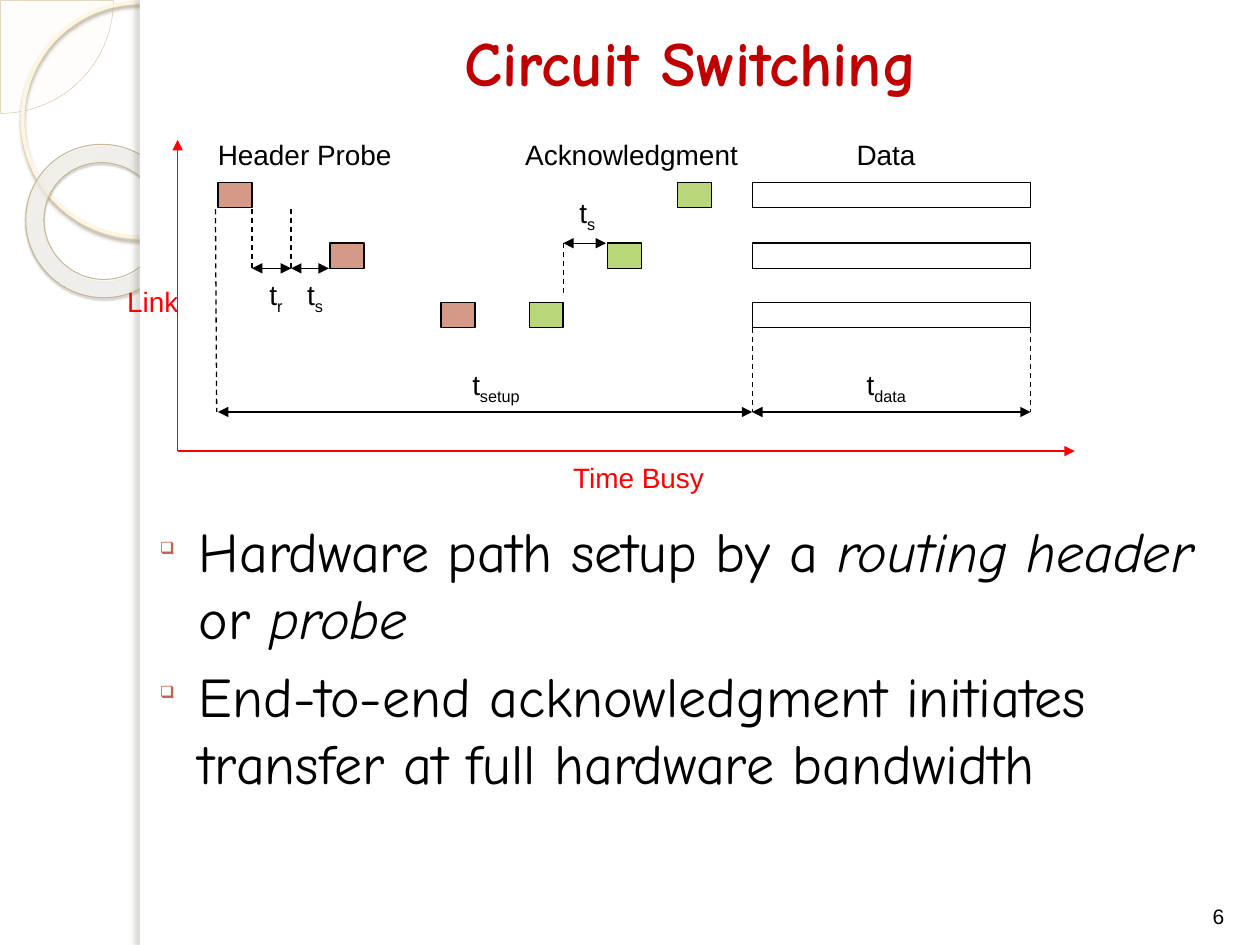
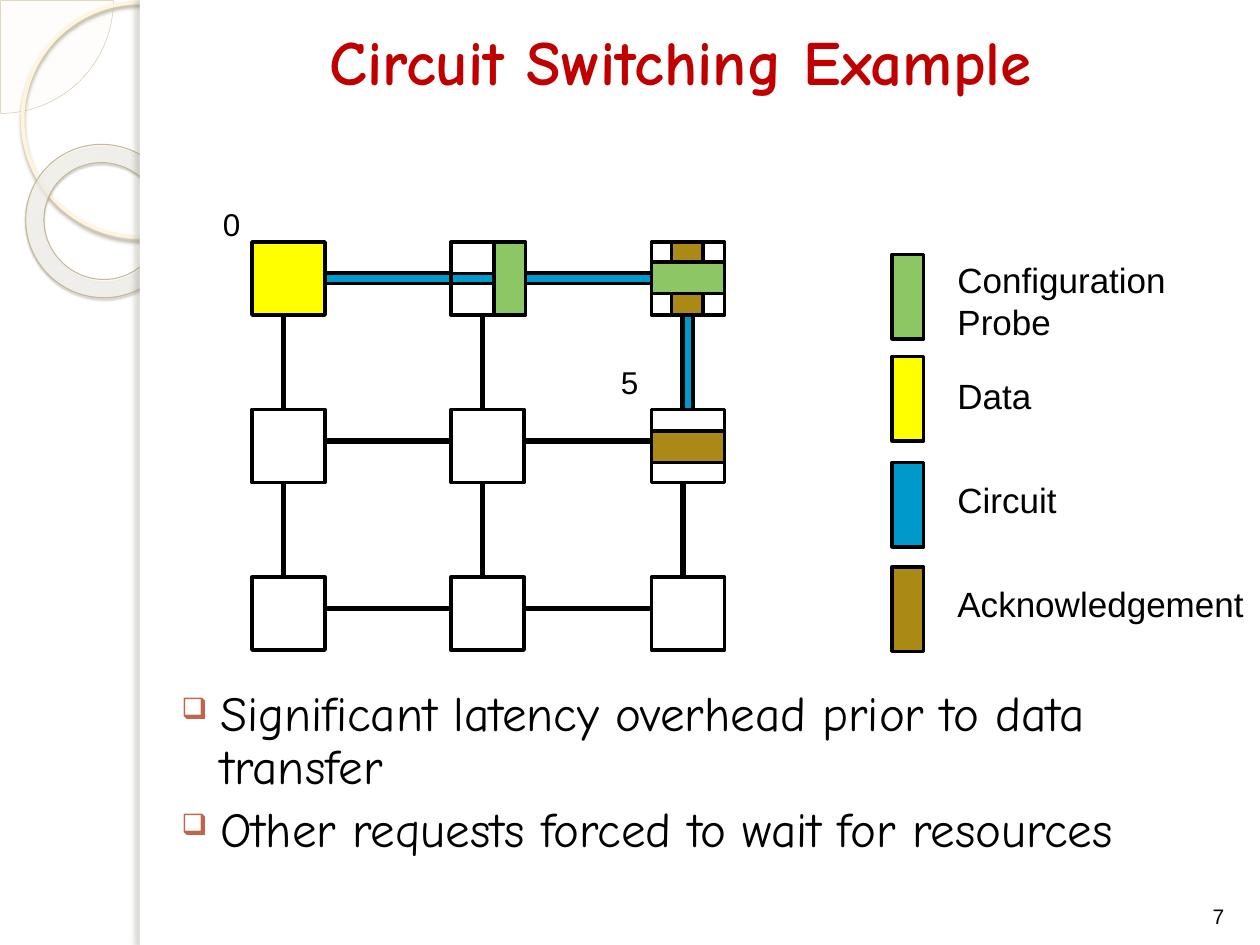
from dataclasses import dataclass
from typing import Optional

import pptx
import pptx.dml.color
import pptx.enum.dml
import pptx.enum.shapes
import pptx.enum.text
import pptx.oxml
import pptx.oxml.ns
import pptx.util

Inches = pptx.util.Inches
Pt = pptx.util.Pt
qn = pptx.oxml.ns.qn
Shape = pptx.enum.shapes.MSO_SHAPE
Align = pptx.enum.text.PP_ALIGN
Anchor = pptx.enum.text.MSO_ANCHOR


@dataclass(frozen=True)
class Theme:
    heading_font: str = "Comic Neue"
    label_font: str = "Arial"
    black: str = "000000"
    white: str = "FFFFFF"
    title: str = "C00000"
    bullet: str = "C0654C"
    axis: str = "FF0000"
    probe: str = "D59988"
    reply: str = "B9D77A"
    config: str = "8DC765"
    data: str = "FFFF00"
    circuit: str = "0099CC"
    acknowledgement: str = "AA8A14"
    title_size: int = 36
    label_size: int = 16
    node_size: int = 18
    legend_size: int = 20
    number_size: int = 12


THEME = Theme()


@dataclass(frozen=True)
class Area:
    left: float
    top: float
    width: float
    height: float

    def lengths(self) -> tuple:
        return tuple(Inches(v) for v in (self.left, self.top, self.width, self.height))


@dataclass(frozen=True)
class Shadow:
    color: str
    opacity: int
    blur: float
    distance: float
    angle: int


@dataclass(frozen=True)
class Label:
    text: str
    area: Area
    subscript: str = ""
    color: str = THEME.black


@dataclass(frozen=True)
class Line:
    start: tuple
    end: tuple
    color: str = THEME.black
    weight: float = 0.75
    dashed: bool = False
    heads: str = ""


@dataclass(frozen=True)
class LegendEntry:
    text: str
    color: str
    top: float
    text_top: float
    text_height: float = 0.43


def rgb(color: str):
    return pptx.dml.color.RGBColor.from_string(color)


def add_child(parent, tag: str, **attributes: str):
    child = parent.makeelement(qn(tag), attributes)
    parent.append(child)
    return child


def add_box(page, area: Area, fill: Optional[str] = None, line: Optional[str] = THEME.black,
            weight: float = 0.75, kind=Shape.RECTANGLE, shadow: Optional[Shadow] = None):
    box = page.shapes.add_shape(kind, *area.lengths())
    if fill:
        box.fill.solid()
        box.fill.fore_color.rgb = rgb(fill)
    else:
        box.fill.background()
    if line:
        box.line.color.rgb = rgb(line)
        box.line.width = Pt(weight)
    else:
        box.line.fill.background()
    box.shadow.inherit = False
    if shadow:
        effects = box._element.spPr.find(qn("a:effectLst"))
        outer = add_child(effects, "a:outerShdw", blurRad=str(Pt(shadow.blur)),
                          dist=str(Pt(shadow.distance)), dir=str(shadow.angle * 60000),
                          algn="tl", rotWithShape="0")
        tint = add_child(outer, "a:srgbClr", val=shadow.color)
        add_child(tint, "a:alpha", val=str(shadow.opacity * 1000))
    return box


def add_line(page, line: Line) -> None:
    ends = [Inches(v) for v in (*line.start, *line.end)]
    connector = page.shapes.add_connector(pptx.enum.shapes.MSO_CONNECTOR.STRAIGHT, *ends)
    connector.line.color.rgb = rgb(line.color)
    connector.line.width = Pt(line.weight)
    if line.dashed:
        connector.line.dash_style = pptx.enum.dml.MSO_LINE.DASH
    outline = connector.line._get_or_add_ln()
    if line.heads == "both":
        add_child(outline, "a:headEnd", type="triangle")
    if line.heads:
        add_child(outline, "a:tailEnd", type="triangle")
    add_child(connector._element.spPr, "a:effectLst")


def style_span(span, size: int, font: str = THEME.label_font, color: str = THEME.black) -> None:
    span.font.size = Pt(size)
    span.font.name = font
    span.font.color.rgb = rgb(color)


def add_text(page, area: Area, text: str, size: int, font: str = THEME.label_font,
             color: str = THEME.black, align=Align.LEFT, anchor=Anchor.TOP):
    box = page.shapes.add_textbox(*area.lengths())
    frame = box.text_frame
    frame.word_wrap = True
    frame.vertical_anchor = anchor
    frame.text = text
    for para in frame.paragraphs:
        para.alignment = align
        for span in para.runs:
            style_span(span, size, font, color)
    return box


def add_label(page, label: Label) -> None:
    box = add_text(page, label.area, label.text, THEME.label_size, color=label.color)
    box.text_frame.word_wrap = False
    box.text_frame.auto_size = pptx.enum.text.MSO_AUTO_SIZE.SHAPE_TO_FIT_TEXT
    if label.subscript:
        span = box.text_frame.paragraphs[0].add_run()
        span.text = label.subscript
        style_span(span, THEME.label_size, color=label.color)
        span._r.get_or_add_rPr().set("baseline", "-25000")


def add_bullets(page, area: Area, items: list, size: int, bullet_percent: int,
                spacing: float = 1.0) -> None:
    frame = add_text(page, area, "", size).text_frame
    for index, pieces in enumerate(items):
        para = frame.paragraphs[0] if index == 0 else frame.add_paragraph()
        para.space_before = Pt(6)
        para.line_spacing = spacing
        for position, piece in enumerate(pieces):
            span = para.add_run()
            span.text = piece
            style_span(span, size, THEME.heading_font)
            span.font.italic = position % 2 == 1
        properties = para._p.get_or_add_pPr()
        properties.set("marL", str(Inches(0.4)))
        properties.set("indent", str(Inches(-0.31)))
        add_child(add_child(properties, "a:buClr"), "a:srgbClr", val=THEME.bullet)
        add_child(properties, "a:buSzPct", val=str(bullet_percent * 1000))
        add_child(properties, "a:buChar", char="❑")


def add_side_band(page) -> None:
    pie = add_box(page, Area(-0.89, -0.89, 1.79, 1.79), "FEFAF4", "D3C39F", 0.25, Shape.PIE)
    pie.adjustments[0] = 0
    pie.adjustments[1] = 54
    tint = pie._element.spPr.find(qn("a:solidFill")).find(qn("a:srgbClr"))
    add_child(tint, "a:alpha", val="33000")

    add_box(page, Area(0.18, 0.02, 1.86, 1.86), None, "FFF5DE", 2.15, Shape.OVAL,
            Shadow("B0A68F", 85, 2, 2, 90))

    ring = add_box(page, Area(0.2, 1.15, 1.23, 1.21), None, "C7B893", 0.58, Shape.DONUT,
                   Shadow("5A5444", 35, 1, 1.2, 75))
    ring.rotation = 38.6
    ring.adjustments[0] = 0.12
    properties = ring._element.spPr
    gradient = properties.makeelement(qn("a:gradFill"), {"rotWithShape": "1"})
    stops = add_child(gradient, "a:gsLst")
    for position, color, opacity in ((0, "FFFCF6", 70), (70, "FFFEFB", 55), (100, "F0D28E", 60)):
        stop = add_child(stops, "a:gs", pos=str(position * 1000))
        add_child(add_child(stop, "a:srgbClr", val=color), "a:alpha", val=str(opacity * 1000))
    add_child(add_child(gradient, "a:path", path="circle"), "a:fillToRect",
              l="-408000", t="-50000", r="508000", b="150000")
    properties.replace(properties.find(qn("a:noFill")), gradient)

    add_box(page, Area(1.11, 0, 8.89, 7.5), THEME.white, None)
    add_box(page, Area(1.11, 0, 0.08, 7.5), THEME.white, None,
            shadow=Shadow("736F63", 25, 3, 3, 180))


def add_page(deck, title: str, title_area: Area, number: int):
    page = deck.slides.add_slide(deck.slide_layouts[6])
    add_side_band(page)
    box = add_text(page, title_area, title, THEME.title_size, THEME.heading_font,
                   THEME.title, Align.CENTER, Anchor.MIDDLE)
    box.text_frame.paragraphs[0].runs[0].font.bold = True
    add_text(page, Area(9.42, 6.9, 0.5, 0.52), str(number), THEME.number_size,
             align=Align.CENTER, anchor=Anchor.BOTTOM)
    return page


def build_timing(deck) -> None:
    page = add_page(deck, "Circuit Switching", Area(1.22, 0.14, 8.52, 0.69), 6)
    add_bullets(page, Area(1.08, 4.05, 8.65, 2.95), [
        ["Hardware path setup by a ", "routing header", " or ", "probe"],
        ["End-to-end acknowledgment initiates transfer at full hardware bandwidth"],
    ], 32, 30)

    link_tops = (1.45, 1.93, 2.4)
    probe_lefts = (1.73, 2.62, 3.5)
    reply_lefts = (5.38, 4.82, 4.2)
    data_left, data_right, time_line = 5.97, 8.18, 3.27
    for top, probe_left, reply_left in zip(link_tops, probe_lefts, reply_lefts):
        add_box(page, Area(data_left, top, data_right - data_left, 0.2))
        add_box(page, Area(reply_left, top, 0.27, 0.2), THEME.reply)
        add_box(page, Area(probe_left, top, 0.27, 0.2), THEME.probe)

    for start, end in (((1.71, 1.66), (1.72, time_line)), ((2, 1.66), (2, 2.13)),
                       ((2.31, 1.66), (2.31, 2.13)), ((4.47, 1.93), (4.47, 2.33)),
                       ((data_left, 2.6), (data_left, time_line)),
                       ((data_right, 2.6), (data_right, time_line))):
        add_line(page, Line(start, end, dashed=True))
    for left, right, height in ((2, 2.31, 2.13), (2.31, 2.61, 2.13), (4.47, 4.81, 1.93),
                                (1.73, data_left, time_line),
                                (data_left, data_right, time_line)):
        add_line(page, Line((left, height), (right, height), heads="both"))
    for end in ((8.53, 3.58), (1.41, 1.11)):
        add_line(page, Line((1.41, 3.58), end, THEME.axis, heads="end"))

    for label in (
        Label("Header Probe", Area(1.63, 1.04, 1.58, 0.37)),
        Label("Acknowledgment", Area(4.07, 1.04, 1.89, 0.37)),
        Label("Data", Area(6.7, 1.04, 0.67, 0.37)),
        Label("Time Busy", Area(4.45, 3.61, 1.25, 0.37), color=THEME.axis),
        Label("Link", Area(0.91, 2.21, 0.61, 0.37), color=THEME.axis),
        Label("t", Area(2.04, 2.15, 0.31, 0.37), "r"),
        Label("t", Area(2.34, 2.15, 0.34, 0.37), "s"),
        Label("t", Area(4.5, 1.5, 0.34, 0.37), "s"),
        Label("t", Area(3.65, 2.87, 0.64, 0.37), "setup"),
        Label("t", Area(6.78, 2.87, 0.56, 0.37), "data"),
    ):
        add_label(page, label)


def build_mesh(deck) -> None:
    page = add_page(deck, "Circuit Switching Example ", Area(1.23, 0.17, 8.52, 0.62), 7)
    add_bullets(page, Area(1.25, 5.42, 8.25, 1.67), [
        ["Significant latency overhead prior to data transfer"],
        ["Other requests forced to wait for resources"],
    ], 28, 60, 0.9)

    columns, rows = (2, 3.58, 5.17), (1.92, 3.25, 4.58)
    node, port = 0.58, 0.25
    for top in rows:
        for left in columns:
            fill = THEME.data if (left, top) == (columns[0], rows[0]) else None
            add_box(page, Area(left, top, node, node), fill, weight=2)
    for top in rows:
        for left, right in zip(columns, columns[1:]):
            add_line(page, Line((left + node, top + port), (right, top + port), weight=3))
    for left in columns:
        for top, bottom in zip(rows, rows[1:]):
            add_line(page, Line((left + port, top + node), (left + port, bottom), weight=3))

    for area, color in (
        (Area(2.58, 2.17, 1, 0.08), THEME.circuit),
        (Area(3.58, 2.17, 1.92, 0.08), THEME.circuit),
        (Area(5.42, 2.17, 0.08, 1.08), THEME.circuit),
        (Area(5.17, 3.42, node, 0.25), THEME.acknowledgement),
        (Area(5.33, 1.92, 0.25, node), THEME.acknowledgement),
        (Area(3.92, 1.92, 0.25, node), THEME.config),
        (Area(5.17, 2.08, node, 0.25), THEME.config),
    ):
        add_box(page, area, color, weight=2)

    for entry in (
        LegendEntry("Configuration Probe", THEME.config, 2.02, 2, 0.77),
        LegendEntry("Data", THEME.data, 2.83, 2.92),
        LegendEntry("Circuit", THEME.circuit, 3.67, 3.75),
        LegendEntry("Acknowledgement", THEME.acknowledgement, 4.5, 4.57),
    ):
        add_box(page, Area(7.08, entry.top, 0.25, 0.67), entry.color, weight=2)
        add_text(page, Area(7.5, entry.text_top, 2.5 if entry.text_height < 0.5 else 2.25,
                            entry.text_height), entry.text, THEME.legend_size)
    for name, left, top in (("0", 1.67, 1.58), ("5", 4.83, 2.83)):
        add_text(page, Area(left, top, 0.75, 0.5), name, THEME.node_size)


def main() -> None:
    deck = pptx.Presentation()
    deck.slide_width = Inches(10)
    deck.slide_height = Inches(7.5)
    build_timing(deck)
    build_mesh(deck)
    deck.save("out.pptx")


if __name__ == "__main__":
    main()
